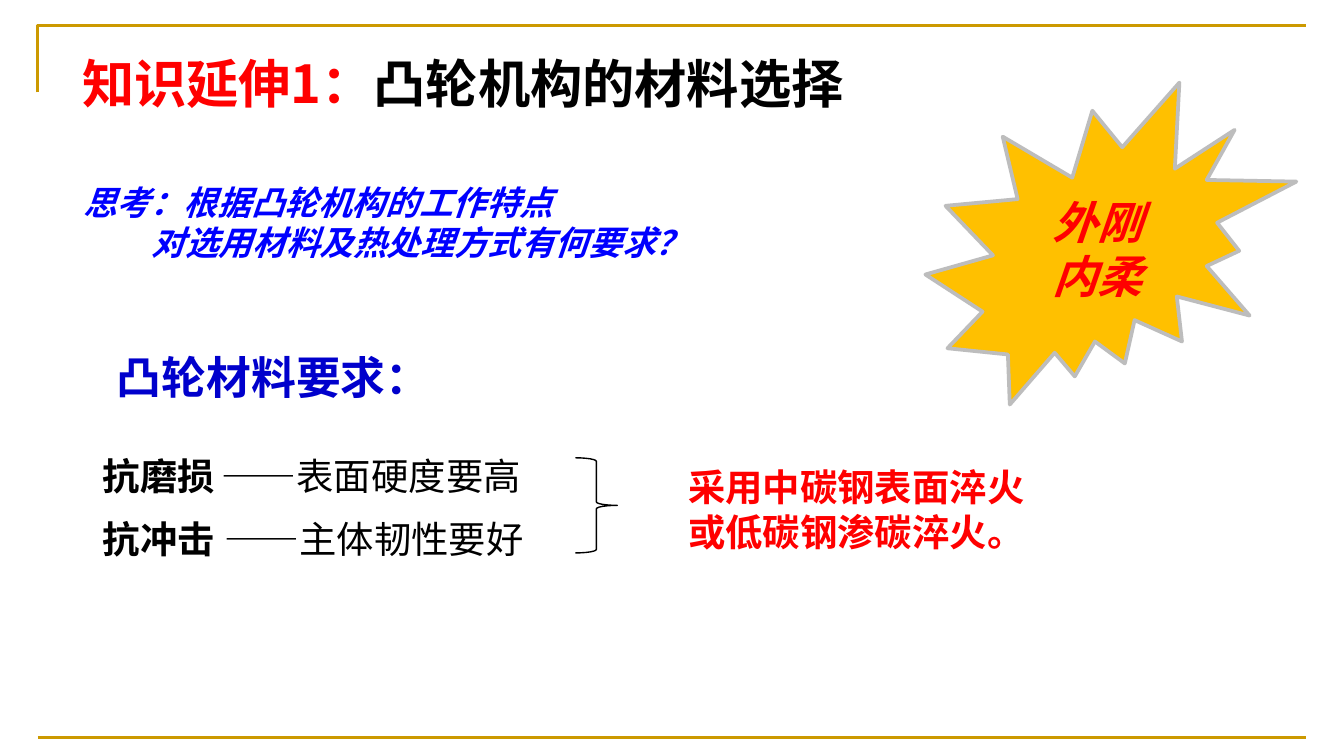
import pptx
import pptx.util
import pptx.dml.color
import pptx.enum.shapes
import pptx.enum.text
import pptx.oxml
import pptx.oxml.ns

PX = 9525  # EMU per px, 96 px to the inch
SC, JP = "Noto Sans CJK SC", "Noto Sans CJK JP"
RED, BLACK, NAVY, BLUE, GOLD = "FF0000", "000000", "0000CC", "0000FF", "CC9900"

TITLE = [("知识延伸1：", RED), ("凸轮机构的材料选择", BLACK)]
QUESTION = ["思考：根据凸轮机构的工作特点", "对选用材料及热处理方式有何要求？"]
HEADING = "凸轮材料要求："
REQUIREMENTS = [("抗磨损", "——表面硬度要高"), ("抗冲击", "——主体韧性要好")]
ANSWER = "采用中碳钢表面淬火或低碳钢渗碳淬火。"
MOTTO = "外刚内柔"


def color(hex_text):
    return pptx.dml.color.RGBColor.from_string(hex_text)


def box(*lengths):
    return [n * PX for n in lengths]


def set_east_asian(props, font):
    """Name the font for Chinese characters in run or paragraph properties."""
    ea = pptx.oxml.parse_xml(
        f'<a:ea {pptx.oxml.ns.nsdecls("a")} typeface="{font}"/>')
    props.find(pptx.oxml.ns.qn("a:latin")).addnext(ea)


def style(p, size, hex_text, bold=True, italic=False, font=SC, latin=None):
    f = p.font
    f.size, f.bold, f.italic = pptx.util.Pt(size), bold, italic
    f.color.rgb = color(hex_text)
    f.name = latin or font
    set_east_asian(p._p.pPr.find(pptx.oxml.ns.qn("a:defRPr")), font)


def add_text(place, lines, *look, **more):
    tf = s.shapes.add_textbox(*box(*place)).text_frame
    tf.word_wrap = True
    tf.text = "\n".join(lines)
    for p in tf.paragraphs:
        style(p, *look, **more)
    return tf


def outline(sp, hex_text, width):
    sp.line.color.rgb = color(hex_text)
    sp.line.width = pptx.util.Pt(width)


def add_shape(kind, place, fill, line, width):
    sp = s.shapes.add_shape(kind, *box(*place))
    sp.shadow.inherit = False
    sp.fill.solid()
    sp.fill.fore_color.rgb = color(fill)
    outline(sp, line, width)
    return sp


prs = pptx.Presentation()
prs.slide_width, prs.slide_height = box(960, 540)
s = prs.slides.add_slide(prs.slide_layouts[5])

# Frame lines
pen = s.shapes.build_freeform(27, 66, scale=PX)
pen.add_line_segments([(27, 18), (933, 18)], close=False)
frame = pen.convert_to_shape()
frame.shadow.inherit = False
frame.fill.background()
outline(frame, GOLD, 1.5)
base = s.shapes.add_connector(
    pptx.enum.shapes.MSO_CONNECTOR.STRAIGHT, *box(27, 527, 933, 527))
base._element.spPr.append(
    pptx.oxml.parse_xml(f'<a:effectLst {pptx.oxml.ns.nsdecls("a")}/>'))
outline(base, GOLD, 1.5)

# Title
title = s.shapes.title
title.left, title.top, title.width, title.height = box(49, 32, 570, 55)
tf = title.text_frame
tf.word_wrap = True
tf.auto_size = pptx.enum.text.MSO_AUTO_SIZE.NONE
tf.vertical_anchor = pptx.enum.text.MSO_ANCHOR.TOP
p = tf.paragraphs[0]
p.alignment = pptx.enum.text.PP_ALIGN.LEFT
style(p, 28, BLACK)
for text, hex_text in TITLE:
    r = p.add_run()
    r.text = text
    r.font.color.rgb = color(hex_text)

# Question, heading and answer
tf = add_text((50, 125, 680, 68), QUESTION, 18, BLUE, italic=True, latin="Arial")
tf.paragraphs[1]._p.pPr.set("marL", str(49 * PX))
add_text((74, 245, 247, 48), [HEADING], 24, NAVY)
add_text((482, 327, 272, 74), [ANSWER], 20, RED)

# Requirements
for i, (name, need) in enumerate(REQUIREMENTS):
    top = 319 + 45 * i
    add_text((64, top, 340, 42), [name], 20, BLACK)
    add_text((149 + 2 * i, top, 239, 42), [need], 20, BLACK, bold=False)
add_shape(pptx.enum.shapes.MSO_SHAPE.RIGHT_BRACE, (411, 327, 30, 68),
          "FFFFFF", BLACK, 0.75)

# Motto
star = add_shape(pptx.enum.shapes.MSO_SHAPE.EXPLOSION2, (661, 59, 265, 230),
                 "FFC000", "BDBDBD", 2)
tf = star.text_frame
tf.vertical_anchor = pptx.enum.text.MSO_ANCHOR.MIDDLE
tf.text = MOTTO
p = tf.paragraphs[0]
p.alignment = pptx.enum.text.PP_ALIGN.CENTER
style(p, 24, RED, italic=True, font=JP)

prs.save("out.pptx")
